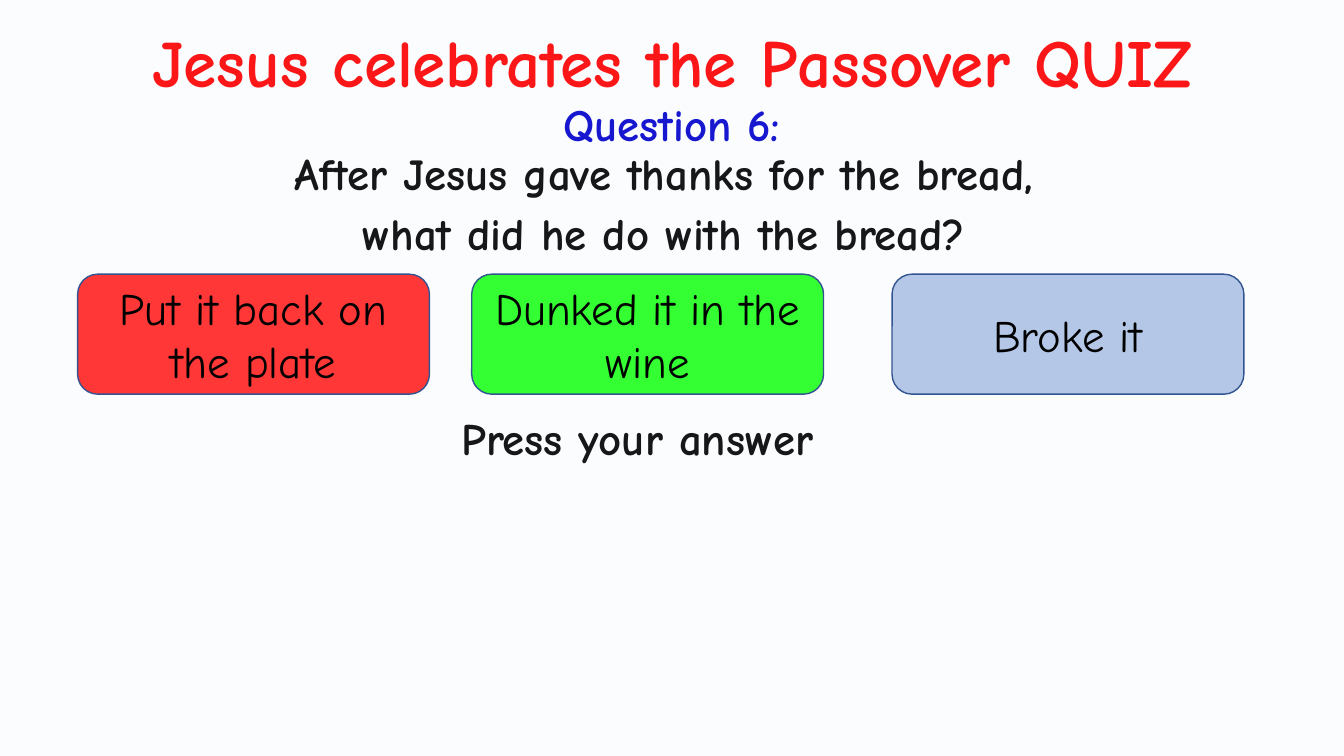
import pptx
import pptx.dml.color
import pptx.enum.shapes
import pptx.enum.text
import pptx.oxml
import pptx.oxml.ns
import pptx.util

Pt = pptx.util.Pt
ALIGN = pptx.enum.text.PP_ALIGN
ANCHOR = pptx.enum.text.MSO_ANCHOR
SHAPE = pptx.enum.shapes.MSO_SHAPE
FONT = "Comic Neue"
COLOURS = {
    "title": "FF0000",
    "title edge": "0000FF",
    "heading": "0000CC",
    "text": "000000",
    "line": "325491",
    "veil": "DAE3F3",
    "red": "FF3737",
    "green": "33FF33",
    "blue": "B4C7E7",
}


def colour(name):
    """Return the named colour."""
    return pptx.dml.color.RGBColor.from_string(COLOURS[name])


def place(shape, box):
    """Move a shape to a box of left, top, width and height in points."""
    shape.left, shape.top, shape.width, shape.height = map(Pt, box)


def write(shape, lines, size=32, tint="text", bold=True, align=ALIGN.CENTER,
          anchor=ANCHOR.TOP, wrap=True, before=0, spacing=1.0):
    """Write one formatted paragraph per line and return the last run."""
    frame = shape.text_frame
    frame.auto_size = pptx.enum.text.MSO_AUTO_SIZE.NONE
    frame.word_wrap = wrap
    frame.vertical_anchor = anchor
    for index, line in enumerate(lines):
        para = frame.add_paragraph() if index else frame.paragraphs[0]
        para.alignment = align
        para.space_before = Pt(before)
        para.line_spacing = spacing
        span = para.add_run()
        span.text = line
        span.font.name = FONT
        span.font.size = Pt(size)
        span.font.bold = bold
        span.font.color.rgb = colour(tint)
    return span


def add_panel(page, kind, box, fill):
    """Add a filled shape with the thin blue outline."""
    panel = page.shapes.add_shape(kind, *map(Pt, box))
    panel.shadow.inherit = False
    panel.fill.solid()
    panel.fill.fore_color.rgb = colour(fill)
    panel.line.color.rgb = colour("line")
    panel.line.width = Pt(1)
    return panel


def add_title(page, box):
    """Fill the title placeholder with outlined red text."""
    title = page.shapes.title
    place(title, box)
    span = write(title, ["Jesus celebrates the Passover QUIZ"], 48, "title", wrap=False)
    edge = pptx.oxml.parse_xml(
        f'<a:ln {pptx.oxml.ns.nsdecls("a")} w="{Pt(1.06)}"><a:solidFill>'
        f'<a:srgbClr val="{COLOURS["title edge"]}"/></a:solidFill></a:ln>')
    span.font._element.insert(0, edge)


def add_question(page, box):
    """Fill the body placeholder with the unbulleted question."""
    body = page.placeholders[1]
    place(body, box)
    write(body, ["After Jesus gave thanks for the bread, ",
                 "what did he do with the bread? "], before=10, spacing=Pt(33))
    for para in body.text_frame.paragraphs:
        props = para._p.get_or_add_pPr()
        props.set("marL", "0")
        props.set("indent", "0")
        props.append(pptx.oxml.parse_xml(f'<a:buNone {pptx.oxml.ns.nsdecls("a")}/>'))


def add_label(page, box, text, **style):
    """Add a one-line text box."""
    label = page.shapes.add_textbox(*map(Pt, box))
    write(label, [text], **style)


def add_veil(page, box):
    """Cover the page with a pale tint at ten percent opacity."""
    veil = add_panel(page, SHAPE.RECTANGLE, box, "veil")
    tint = veil.fill._xPr.find(".//" + pptx.oxml.ns.qn("a:srgbClr"))
    tint.append(pptx.oxml.parse_xml(
        f'<a:alpha {pptx.oxml.ns.nsdecls("a")} val="10000"/>'))


def add_answer(page, box, text, fill):
    """Add one rounded answer button."""
    button = add_panel(page, SHAPE.ROUNDED_RECTANGLE, box, fill)
    write(button, [text], bold=False, anchor=ANCHOR.MIDDLE)


def add_quiz_page(deck):
    """Build the quiz slide."""
    page = deck.slides.add_slide(deck.slide_layouts[1])
    add_title(page, (34.56, 10.8, 891.36, 65.52))
    add_question(page, (64.08, 105.84, 832.32, 85.68))
    add_label(page, (322.56, 294.48, 484.56, 51.84), "Press your answer",
              align=ALIGN.LEFT, before=7.5, spacing=0.9)
    add_label(page, (321.12, 65.52, 317.52, 46.08), "Question 6:", tint="heading")
    add_veil(page, (-30.96, -43.92, 1021.68, 628.56))
    for left, text, fill in (
        (55.44, "Put it back on the plate", "red"),
        (336.96, "Dunked it in the wine", "green"),
        (637.2, "Broke it", "blue"),
    ):
        add_answer(page, (left, 195.84, 251.28, 85.68), text, fill)


def main():
    """Create and save the deck."""
    deck = pptx.Presentation()
    deck.slide_width, deck.slide_height = Pt(960), Pt(540)
    add_quiz_page(deck)
    deck.save("out.pptx")


if __name__ == "__main__":
    main()
